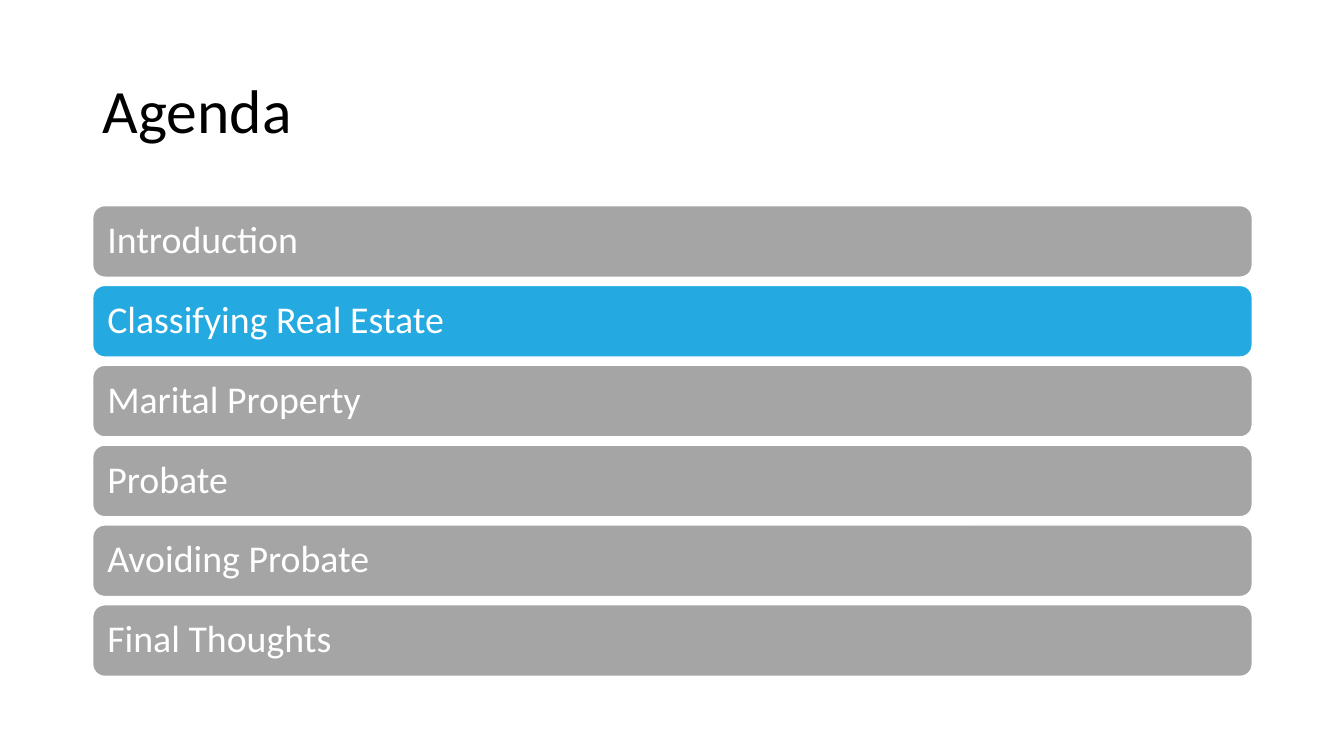
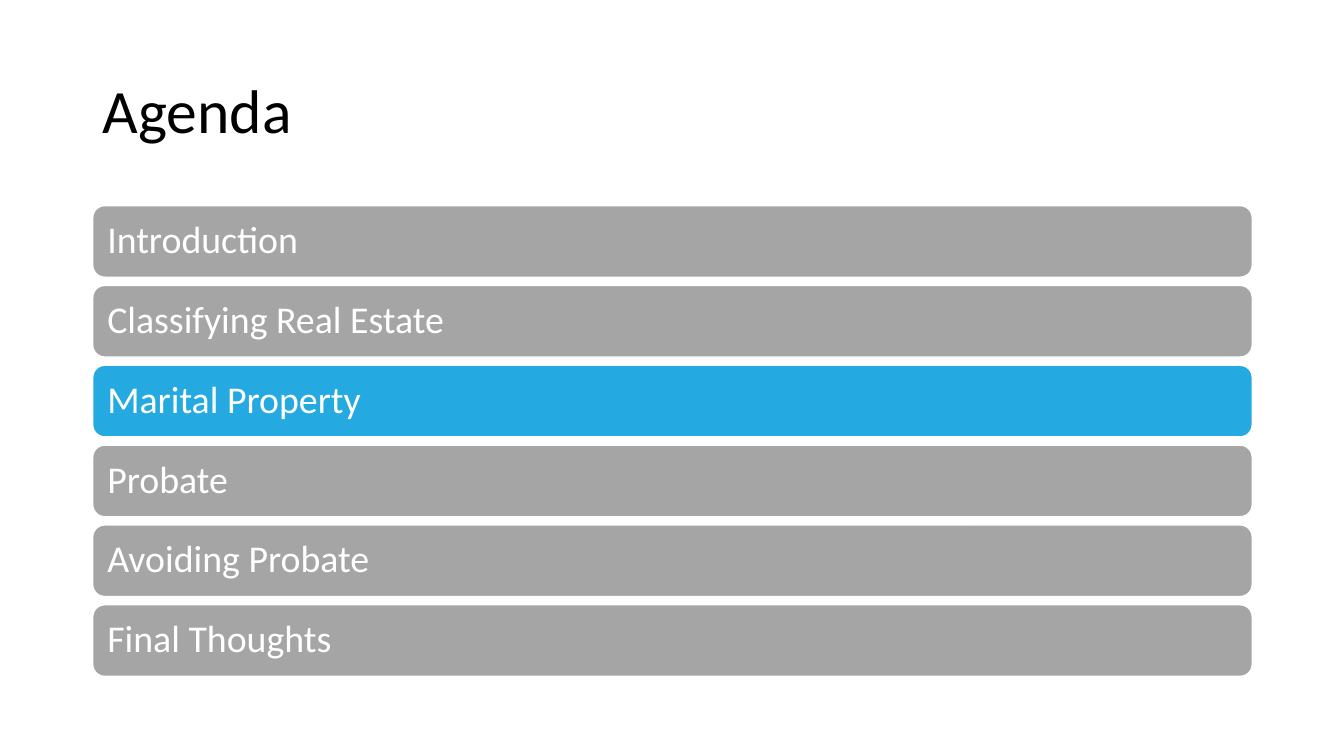
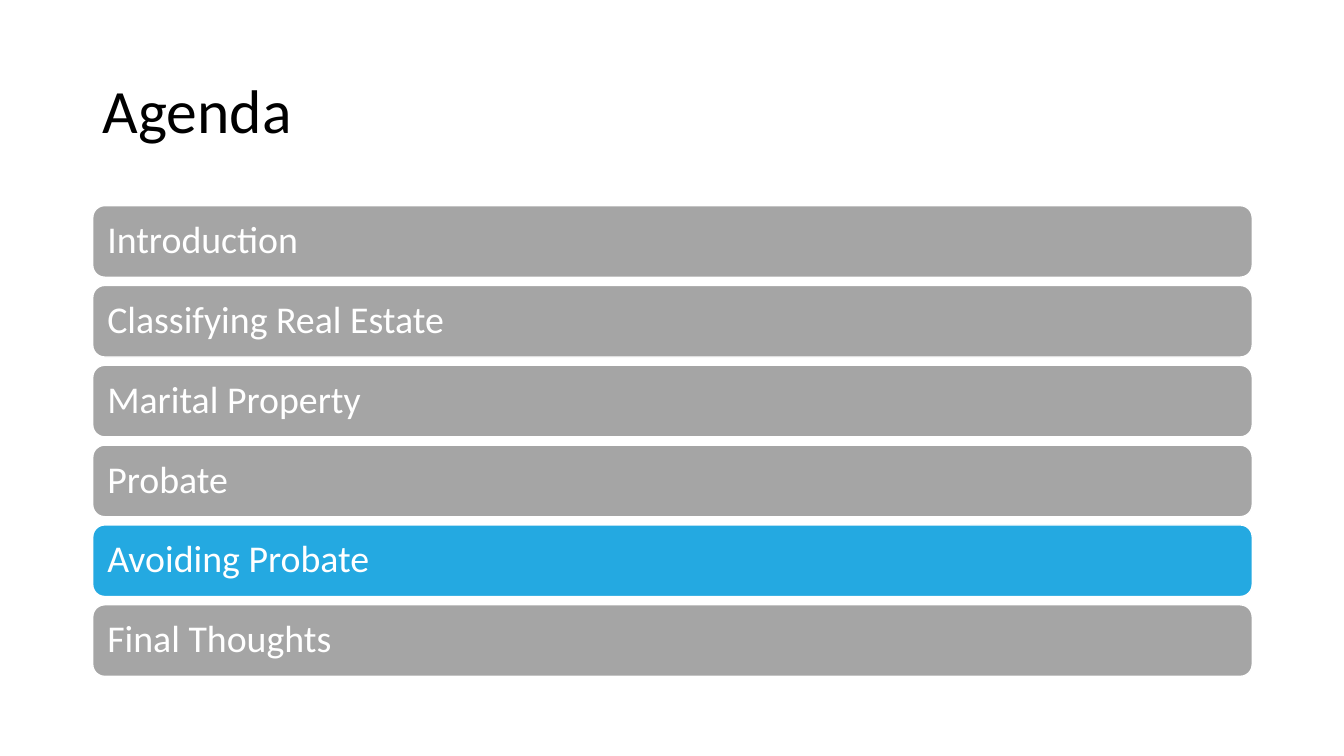
"""Build three agenda slides, each highlighting the section that comes next."""
from dataclasses import dataclass

from pptx import Presentation
from pptx.dml.color import RGBColor
from pptx.enum.shapes import MSO_SHAPE
from pptx.enum.text import MSO_ANCHOR, MSO_AUTO_SIZE, PP_ALIGN
from pptx.slide import Slide
from pptx.text.text import TextFrame
from pptx.util import Inches, Pt

ROUNDED = MSO_SHAPE.ROUNDED_RECTANGLE
MIDDLE = MSO_ANCHOR.MIDDLE
LEFT = PP_ALIGN.LEFT
FIXED_SIZE = MSO_AUTO_SIZE.NONE

BLACK = RGBColor(0x00, 0x00, 0x00)
WHITE = RGBColor(0xFF, 0xFF, 0xFF)
GREY = RGBColor(0xA5, 0xA5, 0xA5)
BLUE = RGBColor(0x24, 0xA9, 0xE1)

FONT = "Calibri"
SLIDE_WIDTH, SLIDE_HEIGHT = 13.33, 7.5
MARGIN = 0.92
CONTENT_WIDTH = 11.5
TITLE_TOP, TITLE_HEIGHT = 0.4, 1.45
AGENDA_TOP, AGENDA_BOTTOM = 2.04, 6.71
BAR_HEIGHT = 0.71
BAR_INSET = 0.11
TITLE_ONLY = 5

SECTIONS = (
    "Introduction",
    "Classifying Real Estate",
    "Marital Property",
    "Probate",
    "Avoiding Probate",
    "Final Thoughts",
)
HIGHLIGHTS = ("Classifying Real Estate", "Marital Property", "Avoiding Probate")
BAR_PITCH = (AGENDA_BOTTOM - AGENDA_TOP - BAR_HEIGHT) / (len(SECTIONS) - 1)


@dataclass(frozen=True)
class TextStyle:
    """Size and colour of a line of text."""

    size: int
    color: RGBColor


@dataclass(frozen=True)
class AgendaBar:
    """One section of the agenda in its row."""

    row: int
    section: str
    fill: RGBColor


TITLE_STYLE = TextStyle(44, BLACK)
BAR_STYLE = TextStyle(27, WHITE)


def write_line(frame: TextFrame, text: str, style: TextStyle) -> None:
    """Write one left-aligned, vertically centred line."""
    frame.word_wrap = True
    frame.auto_size = FIXED_SIZE
    frame.vertical_anchor = MIDDLE
    paragraph = frame.paragraphs[0]
    paragraph.alignment = LEFT
    paragraph.line_spacing = 0.9
    run = paragraph.add_run()
    run.text = text
    run.font.name = FONT
    run.font.size = Pt(style.size)
    run.font.color.rgb = style.color


def draw_title(slide: Slide, text: str) -> None:
    """Place and fill the title placeholder."""
    title = slide.shapes.title
    title.left, title.top = Inches(MARGIN), Inches(TITLE_TOP)
    title.width, title.height = Inches(CONTENT_WIDTH), Inches(TITLE_HEIGHT)
    write_line(title.text_frame, text, TITLE_STYLE)


def draw_bar(slide: Slide, bar: AgendaBar) -> None:
    """Draw one agenda bar with its label."""
    top = AGENDA_TOP + bar.row * BAR_PITCH
    shape = slide.shapes.add_shape(
        ROUNDED, Inches(MARGIN), Inches(top), Inches(CONTENT_WIDTH), Inches(BAR_HEIGHT)
    )
    shape.shadow.inherit = False
    shape.fill.solid()
    shape.fill.fore_color.rgb = bar.fill
    shape.line.color.rgb = WHITE
    shape.line.width = Pt(1)
    frame = shape.text_frame
    frame.margin_left = frame.margin_right = Inches(BAR_INSET)
    frame.margin_top = frame.margin_bottom = Inches(BAR_INSET)
    write_line(frame, bar.section, BAR_STYLE)


def main() -> None:
    """Build and save the presentation."""
    presentation = Presentation()
    presentation.slide_width = Inches(SLIDE_WIDTH)
    presentation.slide_height = Inches(SLIDE_HEIGHT)
    for highlight in HIGHLIGHTS:
        slide = presentation.slides.add_slide(presentation.slide_layouts[TITLE_ONLY])
        draw_title(slide, "Agenda")
        for row, section in enumerate(SECTIONS):
            fill = BLUE if section == highlight else GREY
            draw_bar(slide, AgendaBar(row, section, fill))
    presentation.save("out.pptx")


if __name__ == "__main__":
    main()
